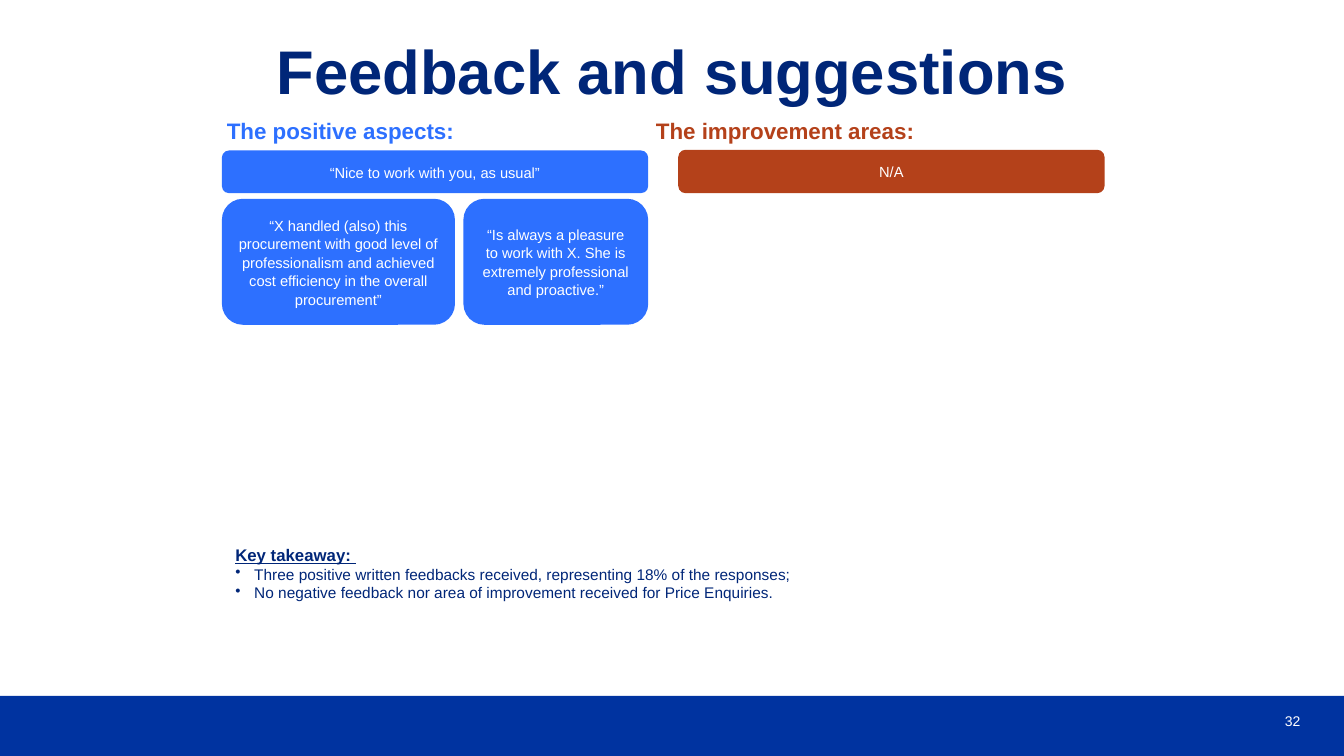
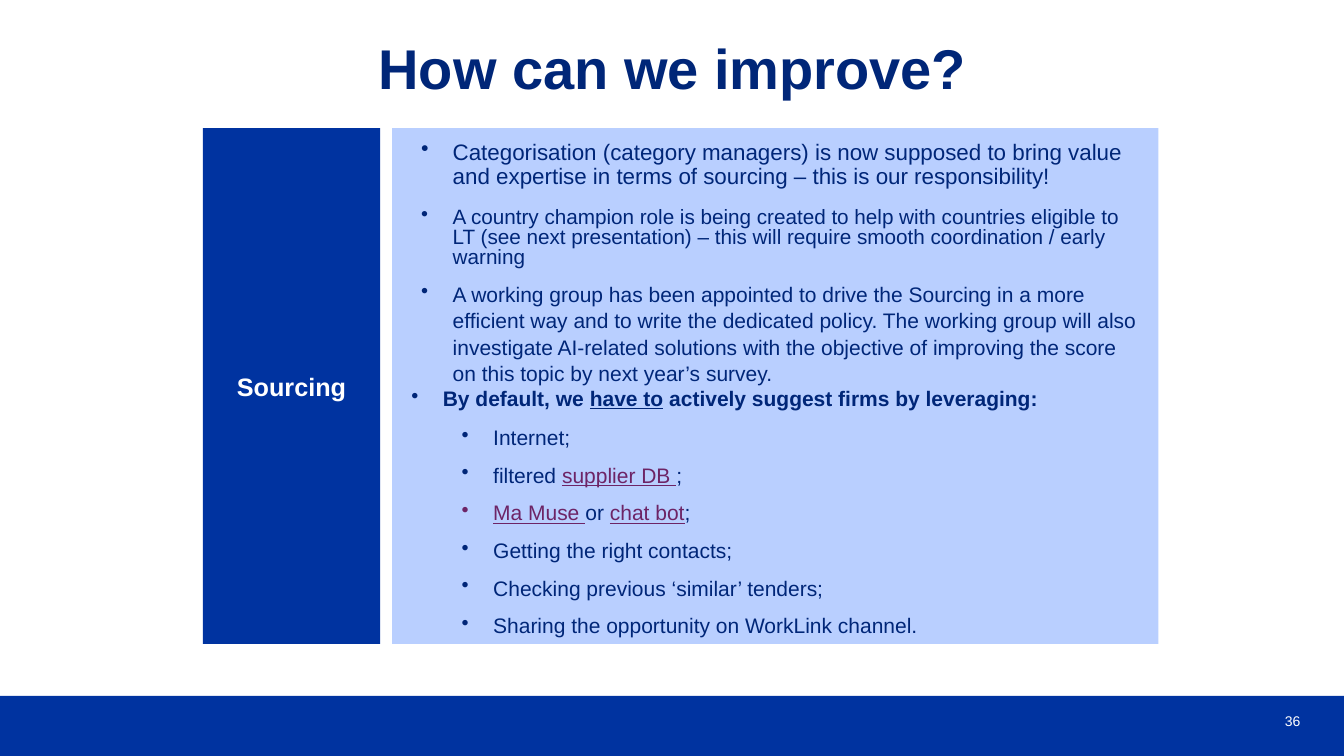
import pptx
import pptx.dml.color
import pptx.enum.shapes
import pptx.enum.text
import pptx.oxml.ns
import pptx.util
from lxml import etree

Pt = pptx.util.Pt
SHAPES = pptx.enum.shapes.MSO_SHAPE
ALIGN = pptx.enum.text.PP_ALIGN
ANCHOR = pptx.enum.text.MSO_ANCHOR

FONT = "Arial"
NAVY, ROYAL, WHITE = "002678", "0033A0", "FFFFFF"
BLUE, RUST, PALE, PLUM = "2D70FF", "B4411A", "B9CFFF", "6D2466"
WIDTH, HEIGHT = 960, 540
BAND_TOP = 497
DEFAULT_INSETS = (7.2, 3.6)
LINK = {"color": PLUM, "underline": True}


def paint(colour_format, colour):
    """Give a fill, line or font colour its hex value."""
    colour_format.rgb = pptx.dml.color.RGBColor.from_string(colour)


def add_paragraph(frame, runs, size, color=NAVY, bold=False, align=ALIGN.LEFT,
                  spacing=1.0, before=0, after=0, bullet=None):
    """Write runs, plain or (text, changes), in the next paragraph; bullet is (left, hang)."""
    paragraph = frame.paragraphs[0]
    if paragraph.runs:
        paragraph = frame.add_paragraph()
    paragraph.alignment = align
    paragraph.line_spacing = spacing
    paragraph.space_before, paragraph.space_after = Pt(before), Pt(after)
    if bullet:
        left, hang = bullet
        properties = paragraph._p.get_or_add_pPr()
        properties.set("marL", str(Pt(left)))
        properties.set("indent", str(-Pt(hang)))
        mark = etree.SubElement(properties, pptx.oxml.ns.qn("a:buChar"))
        mark.set("char", "•")
    for entry in runs:
        text, changes = (entry, {}) if isinstance(entry, str) else entry
        run = paragraph.add_run()
        run.text = text
        run.font.name, run.font.size = FONT, Pt(size)
        run.font.bold = bold
        run.font.underline = changes.get("underline", False)
        paint(run.font.color, changes.get("color", color))


def set_frame(frame, insets=DEFAULT_INSETS, anchor=ANCHOR.TOP):
    """Set wrapping, insets and anchor of a text frame."""
    frame.word_wrap = True
    frame.auto_size = pptx.enum.text.MSO_AUTO_SIZE.NONE
    frame.margin_left = frame.margin_right = Pt(insets[0])
    frame.margin_top = frame.margin_bottom = Pt(insets[1])
    frame.vertical_anchor = anchor


def add_text(slide, place, insets=DEFAULT_INSETS, anchor=ANCHOR.TOP):
    """Add a text box and return its frame."""
    frame = slide.shapes.add_textbox(*map(Pt, place)).text_frame
    set_frame(frame, insets, anchor)
    return frame


def add_panel(slide, place, fill, text=None, size=10.5, bold=False,
              outline=SHAPES.RECTANGLE):
    """Add a flat filled shape with optional centred white text."""
    panel = slide.shapes.add_shape(outline, *map(Pt, place))
    panel.shadow.inherit = False
    panel.fill.solid()
    paint(panel.fill.fore_color, fill)
    panel.line.fill.background()
    if text:
        set_frame(panel.text_frame, anchor=ANCHOR.MIDDLE)
        add_paragraph(panel.text_frame, [text], size, WHITE, bold, ALIGN.CENTER, 1.05)


def add_slide(deck, heading, size, number):
    """Add a slide with title, footer band and page number."""
    slide = deck.slides.add_slide(deck.slide_layouts[5])
    title = slide.shapes.title
    title.left, title.top, title.width, title.height = map(Pt, (32.4, 29.5, 895.7, 84.2))
    set_frame(title.text_frame, (0, 0))
    add_paragraph(title.text_frame, [heading], size, bold=True,
                  align=ALIGN.CENTER, spacing=0.9)
    add_panel(slide, (0, BAND_TOP, WIDTH, HEIGHT - BAND_TOP), ROYAL)
    page = add_text(slide, (874.8, 500.4, 54, 28.8), (0, 0), ANCHOR.MIDDLE)
    add_paragraph(page, [number], 10, WHITE, align=ALIGN.RIGHT)
    return slide


def build_feedback(deck):
    """Build the slide of quotes and key takeaway."""
    slide = add_slide(deck, "Feedback and suggestions", 44, "32")
    for left, heading, color in ((162, "The positive aspects:", BLUE),
                                 (468.5, "The improvement areas:", RUST)):
        add_paragraph(add_text(slide, (left, 83.5, 240, 19.5), (0, 0)),
                      [heading], 16, color, True)
    quotes = (
        ((484.5, 107, 304.5, 31), RUST, "N/A"),
        ((158.5, 107.5, 304.5, 30.5), BLUE, "“Nice to work with you, as usual”"),
        ((158.5, 142, 166.5, 90), BLUE,
         "“X handled (also) this procurement with good level of professionalism "
         "and achieved cost efficiency in the overall procurement”"),
        ((331, 142, 132, 90), BLUE,
         "“Is always a pleasure to work with X. She is extremely professional "
         "and proactive.”"),
    )
    for place, fill, quote in quotes:
        add_panel(slide, place, fill, quote, outline=SHAPES.ROUNDED_RECTANGLE)
    takeaway = add_text(slide, (161, 385.5, 555, 48))
    add_paragraph(takeaway, [("Key takeaway: ", {"underline": True})], 12, bold=True)
    for finding in (
            "Three positive written feedbacks received, representing 18% of the responses;",
            "No negative feedback nor area of improvement received for Price Enquiries."):
        add_paragraph(takeaway, [finding], 11, bullet=(13.5, 13.5))


def build_improvement(deck):
    """Build the slide of sourcing actions."""
    slide = add_slide(deck, "How can we improve?", 40, "36")
    top, height, left, hang = 91.5, 368.5, 293.8, 22.5
    add_panel(slide, (145, top, 126.5, height), ROYAL, "Sourcing", 18, True)
    add_panel(slide, (280, top, 547.5, height), PALE)
    statements = (
        (97.2, 521.3, 52, 16, 0.9,
         "Categorisation (category managers) is now supposed to bring value and "
         "expertise in terms of sourcing – this is our responsibility!"),
        (145.5, 521.3, 54, 14.8, 0.8,
         "A country champion role is being created to help with countries eligible to "
         "LT (see next presentation) – this will require smooth coordination / early "
         "warning"),
        (196.5, 525.6, 80, 15, 1.05,
         "A working group has been appointed to drive the Sourcing in a more efficient "
         "way and to write the dedicated policy. The working group will also "
         "investigate AI-related solutions with the objective of improving the score "
         "on this topic by next year’s survey."),
    )
    for y, width, depth, size, spacing, statement in statements:
        add_paragraph(add_text(slide, (left, y, width, depth)), [statement], size,
                      spacing=spacing, bullet=(hang, hang))
    actions = add_text(slide, (left, 277.2, 525.6, 193), (0, 0))
    add_paragraph(actions,
                  ["By default, we ", ("have to", {"underline": True}),
                   " actively suggest firms by leveraging:"],
                  15, bold=True, spacing=0.9, after=4, bullet=(hang, hang))
    channels = (
        ["Internet;"],
        ["filtered ", ("supplier DB ", LINK), ";"],
        [("Ma Muse ", LINK), "or ", ("chat bot", LINK), ";"],
        ["Getting the right contacts;"],
        ["Checking previous ‘similar’ tenders;"],
        ["Sharing the opportunity on WorkLink channel."],
    )
    for channel in channels:
        add_paragraph(actions, channel, 15, spacing=1.05, before=5, after=3,
                      bullet=(58.5, hang))


def main():
    """Build and save the deck."""
    deck = pptx.Presentation()
    deck.slide_width, deck.slide_height = Pt(WIDTH), Pt(HEIGHT)
    build_feedback(deck)
    build_improvement(deck)
    deck.save("out.pptx")


if __name__ == "__main__":
    main()
